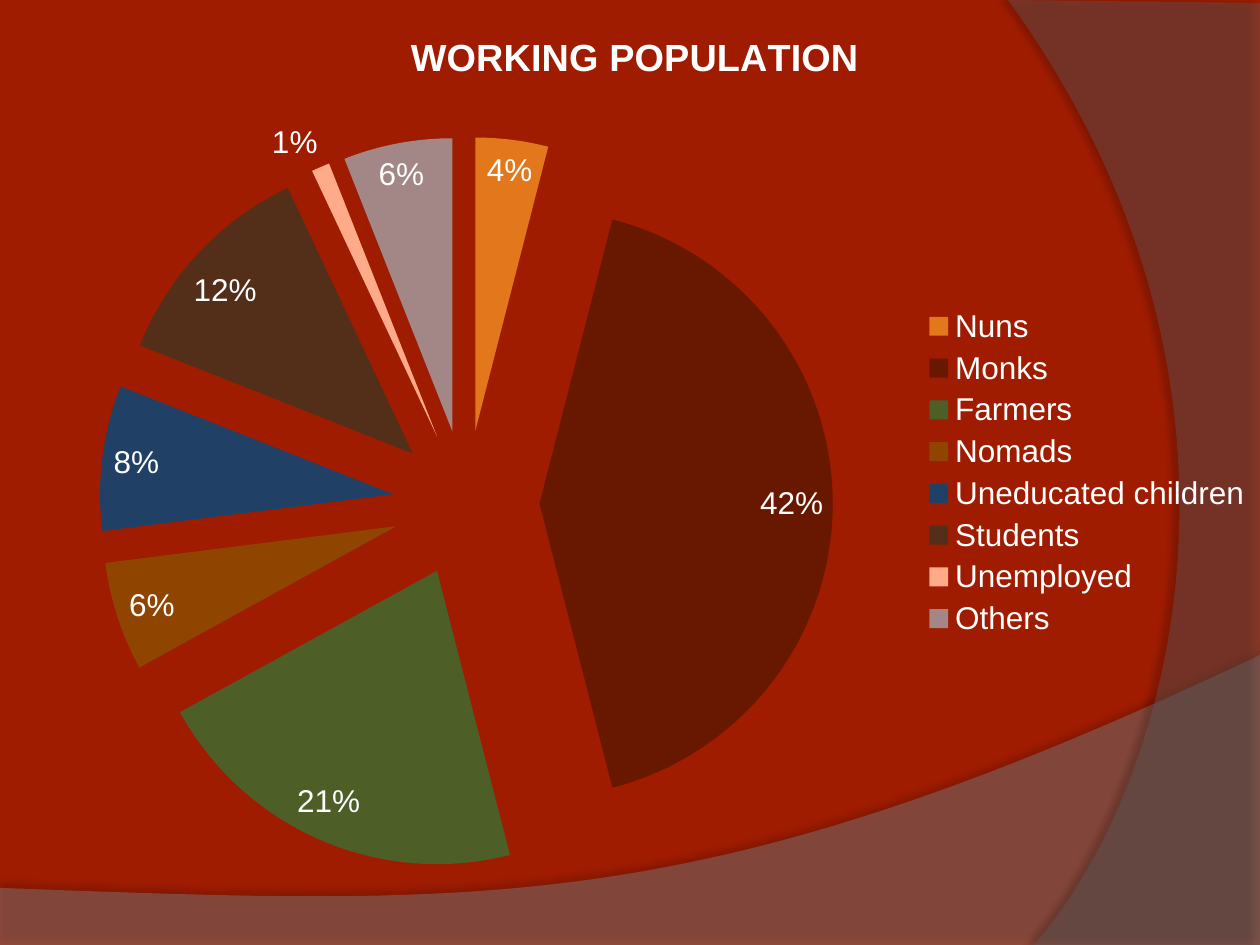
from dataclasses import dataclass

from lxml import etree
from pptx import Presentation
from pptx import util as u
from pptx.chart import data as chart_data
from pptx.dml import color
from pptx.enum import chart as chart_enum
from pptx.oxml import ns

SCALE = 914400 / 126
WIDTH, HEIGHT = 1260, 945
TITLE = "WORKING POPULATION"
FONT = "Arial"
WHITE = "FFFFFF"


@dataclass(frozen=True)
class Sector:
    name: str
    percent: int
    fill: str


@dataclass(frozen=True)
class Swoosh:
    corners: tuple
    curve: tuple
    fill: str
    opacity: int
    shadow_opacity: int
    shadow_distance: float
    shadow_angle: int


SECTORS = (
    Sector("Nuns", 4, "E2781B"),
    Sector("Monks", 42, "691800"),
    Sector("Farmers", 21, "4D5E27"),
    Sector("Nomads", 6, "8F4400"),
    Sector("Uneducated children", 8, "204066"),
    Sector("Students", 12, "532E18"),
    Sector("Unemployed", 1, "FFAA88"),
    Sector("Others", 6, "A38686"),
)

SWOOSHES = (
    Swoosh(((0, 888), (0, 946), (1260, 946), (1260, 655)),
           ((704, 919), (493, 906), (0, 888)), "7F7F7F", 45, 35, 3.5, 270),
    Swoosh(((1260, 3), (1260, 945), (1034, 945)),
           ((1178, 780), (1283, 378), (1008, 0)), "5E5E5E", 40, 45, 4, 180),
)


def emu(px: int) -> u.Emu:
    return u.Emu(round(px * SCALE))


def rgb(value: str) -> color.RGBColor:
    return color.RGBColor.from_string(value)


def child(parent, tag: str, **attributes):
    return etree.SubElement(parent, ns.qn(tag),
                            {key: str(value) for key, value in attributes.items()})


def bend_last_line(shape, swoosh: Swoosh, end_index: int) -> None:
    points = (*swoosh.corners, swoosh.curve[-1])
    left, top = (min(values) for values in zip(*points))
    line = shape._element.findall(".//" + ns.qn("a:lnTo"))[end_index]
    curve = etree.Element(ns.qn("a:cubicBezTo"))
    for x, y in swoosh.curve:
        child(curve, "a:pt", x=x - left, y=y - top)
    line.getparent().replace(line, curve)


def draw_swoosh(page, swoosh: Swoosh) -> None:
    start, *corners = swoosh.corners
    builder = page.shapes.build_freeform(*start, scale=SCALE)
    outline = [*corners, swoosh.curve[-1]]
    builder.add_line_segments(outline)
    shape = builder.convert_to_shape()
    bend_last_line(shape, swoosh, len(outline) - 1)
    shape.line.fill.background()
    shape.fill.solid()
    shape.fill.fore_color.rgb = rgb(swoosh.fill)
    properties = shape._element.spPr
    child(properties.find(".//" + ns.qn("a:srgbClr")), "a:alpha", val=swoosh.opacity * 1000)
    shadow = child(child(properties, "a:effectLst"), "a:outerShdw",
                   blurRad=u.Pt(4), dist=u.Pt(swoosh.shadow_distance),
                   dir=swoosh.shadow_angle * 60000, rotWithShape=0)
    child(child(shadow, "a:srgbClr", val="000000"), "a:alpha",
          val=swoosh.shadow_opacity * 1000)


def format_font(font, size: float, bold: bool = False) -> None:
    font.name = FONT
    font.size = u.Pt(size)
    font.bold = bold
    font.color.rgb = rgb(WHITE)


def place_plot(chart, **fractions: float) -> None:
    area = chart._chartSpace.find(".//" + ns.qn("c:plotArea"))
    for old in area.findall(ns.qn("c:layout")):
        area.remove(old)
    layout = etree.Element(ns.qn("c:layout"))
    manual = child(layout, "c:manualLayout")
    child(manual, "c:layoutTarget", val="inner")
    for axis in ("x", "y"):
        child(manual, f"c:{axis}Mode", val="edge")
    for name, value in fractions.items():
        child(manual, f"c:{name}", val=value)
    area.insert(0, layout)


def explode(series, percent: int) -> None:
    explosion = etree.Element(ns.qn("c:explosion"), {"val": str(percent)})
    series._element.find(ns.qn("c:tx")).addnext(explosion)


def fill_sector(point, sector: Sector) -> None:
    point.format.fill.solid()
    point.format.fill.fore_color.rgb = rgb(sector.fill)
    point.format.line.fill.background()


def format_labels(labels) -> None:
    labels.show_value = False
    labels.show_percentage = True
    labels.number_format = "0%"
    labels.number_format_is_linked = False
    labels.position = chart_enum.XL_LABEL_POSITION.BEST_FIT
    format_font(labels.font, 18)


def draw_chart(page) -> None:
    source = chart_data.CategoryChartData()
    source.categories = [sector.name for sector in SECTORS]
    source.add_series(TITLE, [sector.percent for sector in SECTORS])
    chart = page.shapes.add_chart(chart_enum.XL_CHART_TYPE.PIE, emu(5), emu(0),
                                  emu(WIDTH), emu(HEIGHT), source).chart
    format_font(chart.font, 18)
    chart.has_title = True
    para = chart.chart_title.text_frame.paragraphs[0]
    span = para.add_run()
    span.text = TITLE
    format_font(span.font, 21.6, bold=True)
    chart.has_legend = True
    chart.legend.position = chart_enum.XL_LEGEND_POSITION.RIGHT
    chart.legend.include_in_layout = False
    format_font(chart.legend.font, 18)
    place_plot(chart, x=0.064, y=0.145, w=0.604, h=0.776)
    series = chart.plots[0].series[0]
    explode(series, 25)
    for index, sector in enumerate(SECTORS):
        fill_sector(series.points[index], sector)
    format_labels(series.data_labels)


def main() -> None:
    deck = Presentation()
    deck.slide_width, deck.slide_height = emu(WIDTH), emu(HEIGHT)
    page = deck.slides.add_slide(deck.slide_layouts[6])
    page.background.fill.solid()
    page.background.fill.fore_color.rgb = rgb("9F1C00")
    for swoosh in SWOOSHES:
        draw_swoosh(page, swoosh)
    draw_chart(page)
    deck.save("out.pptx")


if __name__ == "__main__":
    main()
